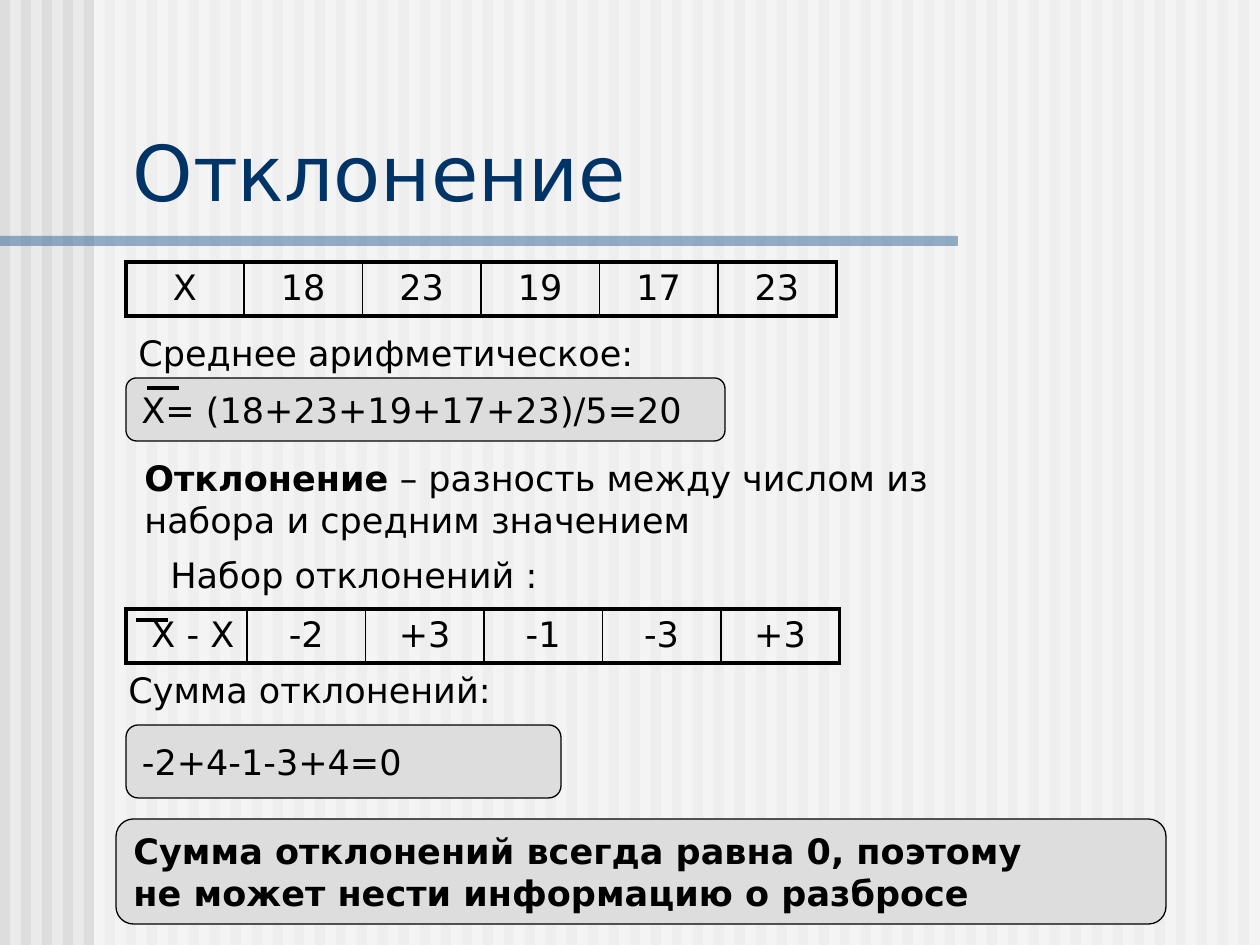
from dataclasses import dataclass

from lxml.etree import SubElement
from pptx import Presentation
from pptx.dml.color import RGBColor
from pptx.enum.shapes import MSO_CONNECTOR, MSO_SHAPE as SHAPE
from pptx.enum.text import MSO_ANCHOR as ANCHOR, MSO_AUTO_SIZE as AUTO, PP_ALIGN as ALIGN
from pptx.oxml.ns import qn
from pptx.util import Emu, Pt

EMU_PER_INCH = 914400
PX_PER_INCH = 126
SLIDE_W, SLIDE_H = 1260, 945
STRIPE_W, STRIPE_STEP = 10, 21
FONT = "DejaVu Sans"
BODY_SIZE = 20

BLACK = RGBColor(0x00, 0x00, 0x00)
WHITE = RGBColor(0xFF, 0xFF, 0xFF)
GRAY = RGBColor(0xDD, 0xDD, 0xDD)
PAPER = RGBColor(0xEA, 0xEA, 0xEA)
NAVY = RGBColor(0x00, 0x33, 0x66)
BLUE = RGBColor(0x33, 0x66, 0x99)


@dataclass(frozen=True)
class Box:
    left: int
    top: int
    width: int
    height: int


@dataclass(frozen=True)
class Run:
    text: str
    bold: bool = False


@dataclass(frozen=True)
class TextItem:
    box: Box
    lines: list[list[Run]]


@dataclass(frozen=True)
class DataRow:
    left: int
    top: int
    widths: list[int]
    values: list[str]
    first_align: ALIGN


@dataclass(frozen=True)
class Overbar:
    left: int
    top: int
    width: int = 32


LABELS = [
    TextItem(Box(126, 325, 627, 54), [[Run("Cреднее арифметическое:")]]),
    TextItem(Box(132, 450, 892, 97), [[
        Run("Отклонение", bold=True),
        Run(" – разность между числом из набора и средним значением"),
    ]]),
    TextItem(Box(158, 547, 462, 54), [[Run("Набор отклонений :")]]),
    TextItem(Box(116, 662, 820, 54), [[Run("Сумма отклонений:")]]),
]
PANELS = [
    TextItem(Box(126, 378, 599, 63), [[Run("X= (18+23+19+17+23)/5=20")]]),
    TextItem(Box(126, 725, 435, 73), [[Run("-2+4-1-3+4=0")]]),
    TextItem(Box(116, 819, 1050, 105), [
        [Run("Сумма отклонений всегда равна 0, поэтому", bold=True)],
        [Run("не может нести информацию о разбросе", bold=True)],
    ]),
]
DATA_ROWS = [
    DataRow(126, 262, [118] + [118.5] * 5,
            ["X", "18", "23", "19", "17", "23"], ALIGN.CENTER),
    DataRow(126, 609, [121] + [118.5] * 5,
            ["X - X", "-2", "+3", "-1", "-3", "+3"], ALIGN.RIGHT),
]
OVERBARS = [Overbar(147, 388), Overbar(136, 620)]


def px(n: float) -> Emu:
    return Emu(round(n * EMU_PER_INCH / PX_PER_INCH))


def place(box: Box) -> tuple[Emu, ...]:
    return px(box.left), px(box.top), px(box.width), px(box.height)


def add_run(p, run: Run, size: int = BODY_SIZE, color: RGBColor = BLACK) -> None:
    r = p.add_run()
    r.text = run.text
    r.font.name, r.font.size, r.font.bold = FONT, Pt(size), run.bold
    r.font.color.rgb = color


def fill_lines(tf, lines: list[list[Run]]) -> None:
    tf.word_wrap = True
    for i, line in enumerate(lines):
        p = tf.paragraphs[0] if i == 0 else tf.add_paragraph()
        p.alignment = ALIGN.LEFT
        for run in line:
            add_run(p, run)


def add_band(shapes, box: Box, color: RGBColor, opacity: int = 100) -> None:
    """Add a borderless rectangle, with its opacity in percent."""
    sp = shapes.add_shape(SHAPE.RECTANGLE, *place(box))
    sp.shadow.inherit = False
    sp.fill.solid()
    sp.fill.fore_color.rgb = color
    sp.line.fill.background()
    if opacity < 100:
        clr = sp.element.spPr.find(qn("a:solidFill")).find(qn("a:srgbClr"))
        SubElement(clr, qn("a:alpha"), val=str(opacity * 1000))


def add_background(s) -> None:
    s.background.fill.solid()
    s.background.fill.fore_color.rgb = PAPER
    shapes = s.shapes.add_group_shape().shapes
    for left in range(0, SLIDE_W, STRIPE_STEP):
        add_band(shapes, Box(left, 0, STRIPE_W, SLIDE_H), GRAY)
    add_band(shapes, Box(94, 0, SLIDE_W - 94, SLIDE_H), WHITE, 50)
    add_band(s.shapes, Box(0, 236, 958, 10), BLUE, 50)


def add_title(s, text: str) -> None:
    sp = s.shapes.title
    sp.element.getparent().append(sp.element)  # bring above the background
    sp.left, sp.top, sp.width, sp.height = place(Box(120, 118, 1125, 105))
    tf = sp.text_frame
    tf.auto_size, tf.vertical_anchor = AUTO.NONE, ANCHOR.BOTTOM
    p = tf.paragraphs[0]
    p.alignment = ALIGN.LEFT
    add_run(p, Run(text), 44, NAVY)


def add_label(s, item: TextItem) -> None:
    fill_lines(s.shapes.add_textbox(*place(item.box)).text_frame, item.lines)


def add_panel(s, item: TextItem) -> None:
    sp = s.shapes.add_shape(SHAPE.ROUNDED_RECTANGLE, *place(item.box))
    sp.shadow.inherit = False
    sp.fill.solid()
    sp.fill.fore_color.rgb = GRAY
    sp.line.color.rgb, sp.line.width = BLACK, Pt(0.75)
    sp.text_frame.vertical_anchor = ANCHOR.MIDDLE
    fill_lines(sp.text_frame, item.lines)


def add_border(cell, side: str, width: float) -> None:
    ln = SubElement(cell._tc.get_or_add_tcPr(), qn(f"a:ln{side}"), w=str(Pt(width)))
    SubElement(SubElement(ln, qn("a:solidFill")), qn("a:srgbClr"), val=str(BLACK))


def add_data_row(s, row: DataRow) -> None:
    box = Box(row.left, row.top, sum(row.widths), 54)
    table = s.shapes.add_table(1, len(row.values), *place(box)).table
    table.first_row = table.horz_banding = False
    last = len(row.values) - 1
    for i, (width, value) in enumerate(zip(row.widths, row.values)):
        table.columns[i].width = px(width)
        cell = table.cell(0, i)
        add_border(cell, "L", 2.25 if i == 0 else 1)
        add_border(cell, "R", 2.25 if i == last else 1)
        add_border(cell, "T", 2.25)
        add_border(cell, "B", 2.25)
        cell.fill.background()
        p = cell.text_frame.paragraphs[0]
        p.alignment = row.first_align if i == 0 else ALIGN.CENTER
        add_run(p, Run(value))


def add_overbar(s, bar: Overbar) -> None:
    y = px(bar.top)
    line = s.shapes.add_connector(
        MSO_CONNECTOR.STRAIGHT, px(bar.left), y, px(bar.left + bar.width), y)
    line.line.color.rgb, line.line.width = BLACK, Pt(2.25)
    SubElement(line.element.spPr, qn("a:effectLst"))


def main() -> None:
    prs = Presentation()
    prs.slide_width, prs.slide_height = px(SLIDE_W), px(SLIDE_H)
    s = prs.slides.add_slide(prs.slide_layouts[5])
    add_background(s)
    add_title(s, "Отклонение")
    for draw, items in [(add_data_row, DATA_ROWS), (add_panel, PANELS),
                        (add_label, LABELS), (add_overbar, OVERBARS)]:
        for item in items:
            draw(s, item)
    prs.save("out.pptx")


if __name__ == "__main__":
    main()
